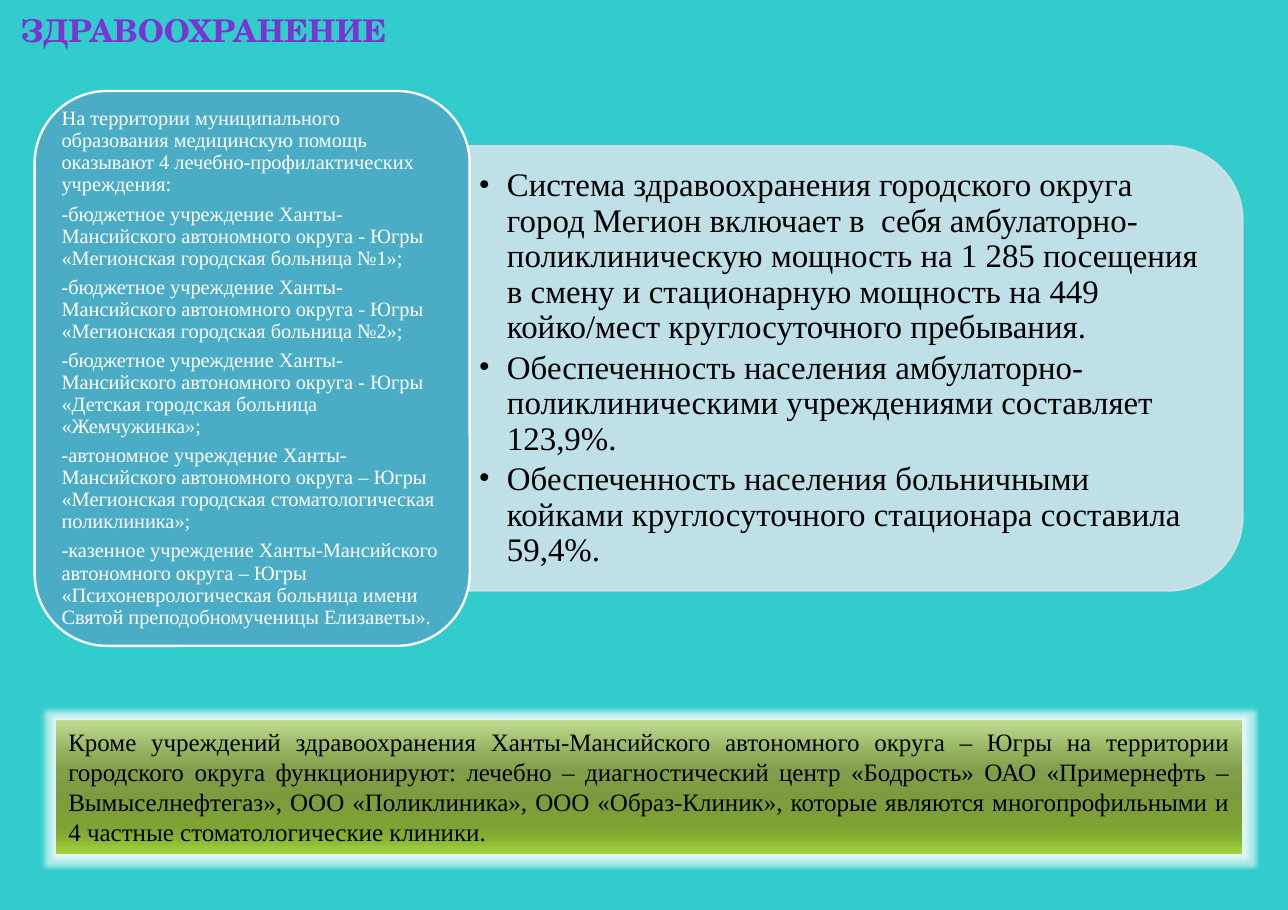
from dataclasses import dataclass

from lxml import etree
from pptx import Presentation
from pptx.dml.color import RGBColor
from pptx.enum import shapes, text
from pptx.oxml.ns import qn
from pptx.util import Cm, Pt


@dataclass(frozen=True)
class Theme:
    background: str = "33CCCC"
    heading: str = "7B34D2"
    panel: str = "D0E3EA"
    card: str = "4BACC6"
    light: str = "FFFFFF"
    dark: str = "000000"
    note_stops: tuple = ((0, "C0DD92"), (25, "92AF5C"), (38, "829E4B"), (55, "7C9A3E"),
                         (80, "7EA234"), (88, "87B131"), (100, "A5D640"))
    heading_font: str = "TeX Gyre Schola"
    body_font: str = "Times New Roman"
    heading_size: int = 20
    panel_size: int = 21
    card_size: int = 13
    note_size: int = 16


theme = Theme()

HEADING = "ЗДРАВООХРАНЕНИЕ"
CAPACITY = [
    "Система здравоохранения городского округа город Мегион включает в  себя "
    "амбулаторно-поликлиническую мощность на 1 285 посещения в смену и стационарную "
    "мощность на 449 койко/мест круглосуточного пребывания.",
    "Обеспеченность населения амбулаторно-поликлиническими учреждениями составляет 123,9%.",
    "Обеспеченность населения больничными койками круглосуточного стационара составила 59,4%.",
]
INSTITUTIONS = [
    "На территории муниципального образования медицинскую помощь оказывают "
    "4 лечебно-профилактических учреждения:",
    "-бюджетное учреждение Ханты-Мансийского автономного округа - Югры "
    "«Мегионская городская больница №1»;",
    "-бюджетное учреждение Ханты-Мансийского автономного округа - Югры "
    "«Мегионская городская больница №2»;",
    "-бюджетное учреждение Ханты-Мансийского автономного округа - Югры "
    "«Детская городская больница «Жемчужинка»;",
    "-автономное учреждение Ханты-Мансийского автономного округа – Югры "
    "«Мегионская городская стоматологическая поликлиника»;",
    "-казенное учреждение Ханты-Мансийского автономного округа – Югры "
    "«Психоневрологическая больница имени Святой преподобномученицы Елизаветы».",
]
PRIVATE_CLINICS = (
    "Кроме учреждений здравоохранения Ханты-Мансийского автономного округа – Югры на "
    "территории городского округа функционируют: лечебно – диагностический центр «Бодрость» "
    "ОАО «Примернефть – Вымыселнефтегаз», ООО «Поликлиника», ООО «Образ-Клиник», которые "
    "являются многопрофильными и 4 частные стоматологические клиники."
)


def write(frame, lines, font, size, color, margins, anchor=text.MSO_ANCHOR.TOP,
          align=text.PP_ALIGN.LEFT, spacing=1.0, after=0):
    """Fill a text frame with uniformly formatted paragraphs; margins are (side, top) in cm."""
    side, top = margins
    frame.word_wrap = True
    frame.vertical_anchor = anchor
    frame.margin_left = frame.margin_right = Cm(side)
    frame.margin_top = frame.margin_bottom = Cm(top)
    frame.text = "\n".join(lines)
    for paragraph in frame.paragraphs:
        paragraph.alignment = align
        paragraph.line_spacing = spacing
        paragraph.space_after = Pt(after)
        for run in paragraph.runs:
            run.font.name = font
            run.font.size = Pt(size)
            run.font.color.rgb = RGBColor.from_string(color)


def add_block(kind, box, fill, outline=None):
    """Add a flat shape; box is left, top, width, height in cm."""
    block = slide.shapes.add_shape(kind, *map(Cm, box))
    block.shadow.inherit = False
    block.fill.solid()
    block.fill.fore_color.rgb = RGBColor.from_string(fill)
    if outline:
        block.line.color.rgb = RGBColor.from_string(outline)
        block.line.width = Pt(1.5)
    else:
        block.line.fill.background()
    return block


deck = Presentation()
deck.slide_width, deck.slide_height = Cm(29.01), Cm(20.5)
slide = deck.slides.add_slide(deck.slide_layouts[6])
slide.background.fill.solid()
slide.background.fill.fore_color.rgb = RGBColor.from_string(theme.background)

heading = slide.shapes.add_textbox(Cm(0.18), Cm(0.1), Cm(13.54), Cm(1.14))
write(heading.text_frame, [HEADING], theme.heading_font, theme.heading_size, theme.heading,
      (0.28, 0.15))
heading.text_frame.paragraphs[0].runs[0].font.bold = True

# Capacity panel: rounded on the right after a quarter turn
panel = add_block(shapes.MSO_SHAPE.ROUND_2_SAME_RECTANGLE, (14.27, -0.41, 10.01, 17.42),
                  theme.panel, theme.panel)
panel.rotation = 90
for color in panel._element.spPr.iter(qn("a:srgbClr")):
    etree.SubElement(color, qn("a:alpha"), val="90000")

capacity = slide.shapes.add_textbox(Cm(10.55), Cm(3.79), Cm(16.94), Cm(9.02))
write(capacity.text_frame, CAPACITY, theme.body_font, theme.panel_size, theme.dark,
      (0.23, 0.1), text.MSO_ANCHOR.MIDDLE, spacing=0.9, after=3.15)
for paragraph in capacity.text_frame.paragraphs:
    properties = paragraph._p.get_or_add_pPr()
    properties.set("marL", str(Cm(0.64)))
    properties.set("indent", str(-Cm(0.64)))
    etree.SubElement(properties, qn("a:buFont"), typeface=theme.body_font)
    etree.SubElement(properties, qn("a:buChar"), char="•")

institutions = add_block(shapes.MSO_SHAPE.ROUNDED_RECTANGLE, (0.78, 2.05, 9.8, 12.5),
                         theme.card, theme.light)
write(institutions.text_frame, INSTITUTIONS, theme.body_font, theme.card_size, theme.light,
      (0.13, 0.08), text.MSO_ANCHOR.MIDDLE, spacing=0.9, after=4.55)

# Note on private clinics: vertical gradient with a pale glow
note = add_block(shapes.MSO_SHAPE.RECTANGLE, (1.26, 16.22, 26.72, 3.02), theme.card)
note.fill.gradient()
note.fill.gradient_angle = 270
stops = note._element.spPr.find(qn("a:gradFill")).find(qn("a:gsLst"))
for stop in list(stops):
    stops.remove(stop)
for position, color in theme.note_stops:
    stop = etree.SubElement(stops, qn("a:gs"), pos=str(position * 1000))
    etree.SubElement(stop, qn("a:srgbClr"), val=color)
effects = note._element.spPr.find(qn("a:effectLst"))
glow = etree.SubElement(effects, qn("a:glow"), rad=str(Cm(0.18)))
glow_color = etree.SubElement(glow, qn("a:srgbClr"), val=theme.light)
etree.SubElement(glow_color, qn("a:alpha"), val="60000")
write(note.text_frame, [PRIVATE_CLINICS], theme.body_font, theme.note_size, theme.dark,
      (0.28, 0.15), align=text.PP_ALIGN.JUSTIFY)

deck.save("out.pptx")
